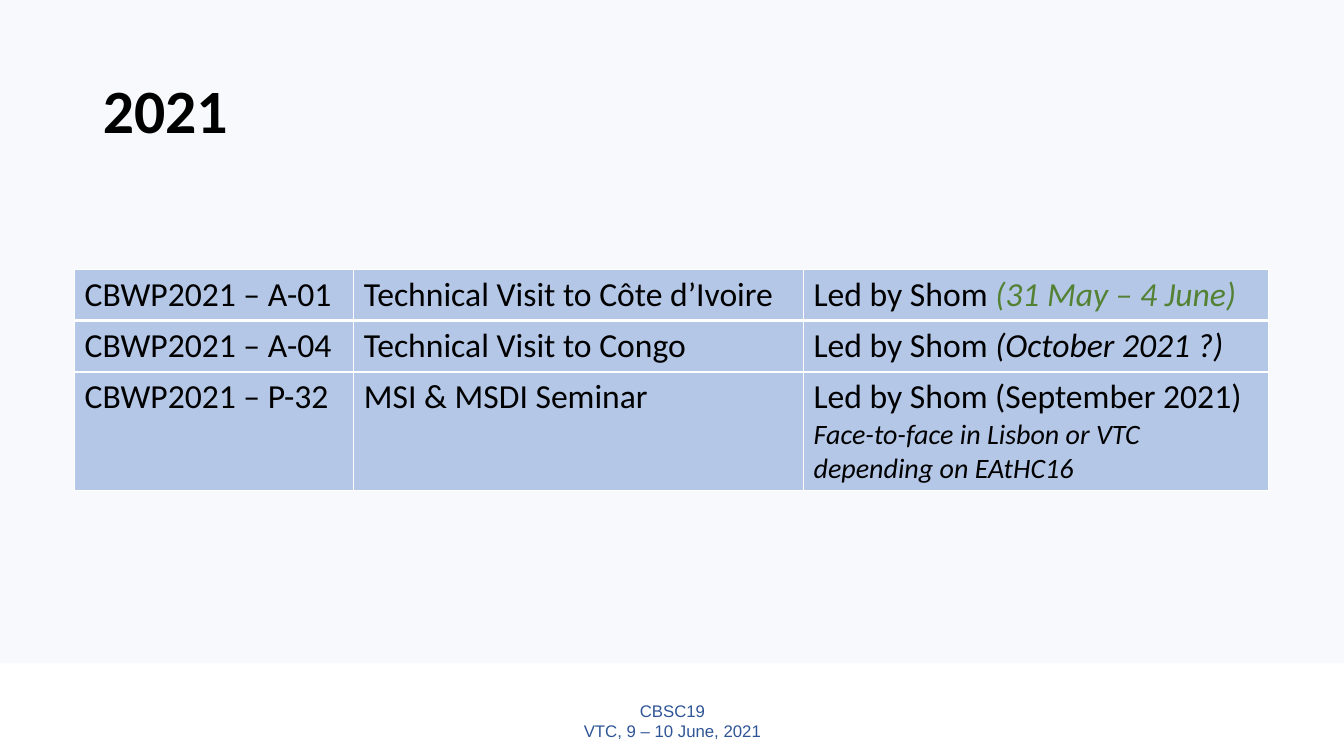
"""Build the 2021 work programme slide with its table of activities."""
import dataclasses
import typing

import lxml.etree
import pptx
import pptx.dml.color
import pptx.enum.shapes
import pptx.enum.text
import pptx.oxml.ns
import pptx.util

Inches = pptx.util.Inches
qn = pptx.oxml.ns.qn


@dataclasses.dataclass(frozen=True)
class Span:
    text: str
    size: float = 24
    color: str = "000000"
    font: str = "Calibri"
    bold: bool = False
    italic: bool = False


@dataclasses.dataclass(frozen=True)
class Activity:
    code: str
    subject: str
    lead: list[list[Span]]
    height: float = 0.51
    bottom_border: float = 1

    def cells(self) -> list[list[list[Span]]]:
        return [[[Span(self.code)]], [[Span(self.subject)]], self.lead]


COLUMN_WIDTHS = [2.77, 4.46, 4.61]
FOOTER = ["CBSC19", "VTC, 9 – 10 June, 2021"]
ACTIVITIES = [
    Activity("CBWP2021 – A-01", "Technical Visit to Côte d’Ivoire",
             [[Span("Led by Shom "), Span("(31 May – 4 June)", color="548235", italic=True)]],
             bottom_border=3),
    Activity("CBWP2021 – A-04", "Technical Visit to Congo",
             [[Span("Led by Shom "), Span("(October 2021 ?)", italic=True)]]),
    Activity("CBWP2021 – P-32", "MSI & MSDI Seminar",
             [[Span("Led by Shom (September 2021)")],
              [Span("Face-to-face in Lisbon or VTC depending on EAtHC16", size=20, italic=True)]],
             height=1.18),
]


def rgb(color: str) -> pptx.dml.color.RGBColor:
    return pptx.dml.color.RGBColor.from_string(color)


def apply(target: typing.Any, values: dict[str, typing.Any]) -> None:
    for name, value in values.items():
        setattr(target, name, value)


def place(shape: typing.Any, left: float, top: float, width: float, height: float) -> None:
    apply(shape, {"left": Inches(left), "top": Inches(top),
                  "width": Inches(width), "height": Inches(height)})


def add_span(paragraph: typing.Any, span: Span) -> None:
    run = paragraph.add_run()
    run.text = span.text
    apply(run.font, {"name": span.font, "size": pptx.util.Pt(span.size),
                     "bold": span.bold, "italic": span.italic})
    run.font.color.rgb = rgb(span.color)


def write(frame: typing.Any, paragraphs: list[list[Span]]) -> None:
    for index, spans in enumerate(paragraphs):
        paragraph = frame.add_paragraph() if index else frame.paragraphs[0]
        for span in spans:
            add_span(paragraph, span)


def add_border(cell: typing.Any, side: str, width: float) -> None:
    properties = cell._tc.get_or_add_tcPr()
    line = lxml.etree.SubElement(properties, qn(f"a:ln{side}"), w=str(pptx.util.Pt(width)))
    fill = lxml.etree.SubElement(line, qn("a:solidFill"))
    lxml.etree.SubElement(fill, qn("a:srgbClr"), val="FFFFFF")


def add_title(slide: typing.Any) -> None:
    title = slide.shapes.title
    place(title, 0.92, 0.4, 11.5, 1.45)
    title.text_frame.vertical_anchor = pptx.enum.text.MSO_ANCHOR.MIDDLE
    write(title.text_frame, [[Span("2021", size=44, bold=True)]])
    apply(title.text_frame.paragraphs[0],
          {"alignment": pptx.enum.text.PP_ALIGN.LEFT, "line_spacing": 0.9})


def add_panel(slide: typing.Any) -> None:
    panel = slide.shapes.add_shape(pptx.enum.shapes.MSO_SHAPE.RECTANGLE,
                                   0, 0, Inches(13.33), Inches(6.58))
    panel.shadow.inherit = False
    panel.line.fill.background()
    panel.fill.solid()
    panel.fill.fore_color.rgb = rgb("DAE3F3")
    color = panel.element.find(".//" + qn("a:srgbClr"))
    lxml.etree.SubElement(color, qn("a:alpha"), val="21000")
    slide.shapes.title.element.addprevious(panel.element)


def add_footer(slide: typing.Any) -> None:
    footer = slide.shapes.add_textbox(Inches(4.42), Inches(6.95), Inches(4.5), Inches(0.4))
    apply(footer.text_frame, {"word_wrap": True,
                              "vertical_anchor": pptx.enum.text.MSO_ANCHOR.MIDDLE})
    paragraph = footer.text_frame.paragraphs[0]
    paragraph.alignment = pptx.enum.text.PP_ALIGN.CENTER
    for index, text in enumerate(FOOTER):
        if index:
            paragraph.add_line_break()
        add_span(paragraph, Span(text, size=12, color="2F5597", font="Arial"))


def add_activities(slide: typing.Any) -> None:
    frame = slide.shapes.add_table(
        len(ACTIVITIES), len(COLUMN_WIDTHS), Inches(0.74), Inches(2.67),
        Inches(sum(COLUMN_WIDTHS)), Inches(sum(activity.height for activity in ACTIVITIES)))
    table = frame.table
    apply(table, {"first_row": False, "horz_banding": False})
    for column, width in zip(table.columns, COLUMN_WIDTHS):
        column.width = Inches(width)
    top_border = 1
    for row, activity in zip(table.rows, ACTIVITIES):
        row.height = Inches(activity.height)
        borders = {"L": 1, "R": 1, "T": top_border, "B": activity.bottom_border}
        for cell, paragraphs in zip(row.cells, activity.cells()):
            for side, width in borders.items():
                add_border(cell, side, width)
            cell.fill.solid()
            cell.fill.fore_color.rgb = rgb("B4C7E7")
            write(cell.text_frame, paragraphs)
        top_border = activity.bottom_border


def main() -> None:
    presentation = pptx.Presentation()
    apply(presentation, {"slide_width": Inches(13.33), "slide_height": Inches(7.5)})
    slide = presentation.slides.add_slide(presentation.slide_layouts.get_by_name("Title Only"))
    add_title(slide)
    add_panel(slide)
    add_footer(slide)
    add_activities(slide)
    presentation.save("out.pptx")


if __name__ == "__main__":
    main()
